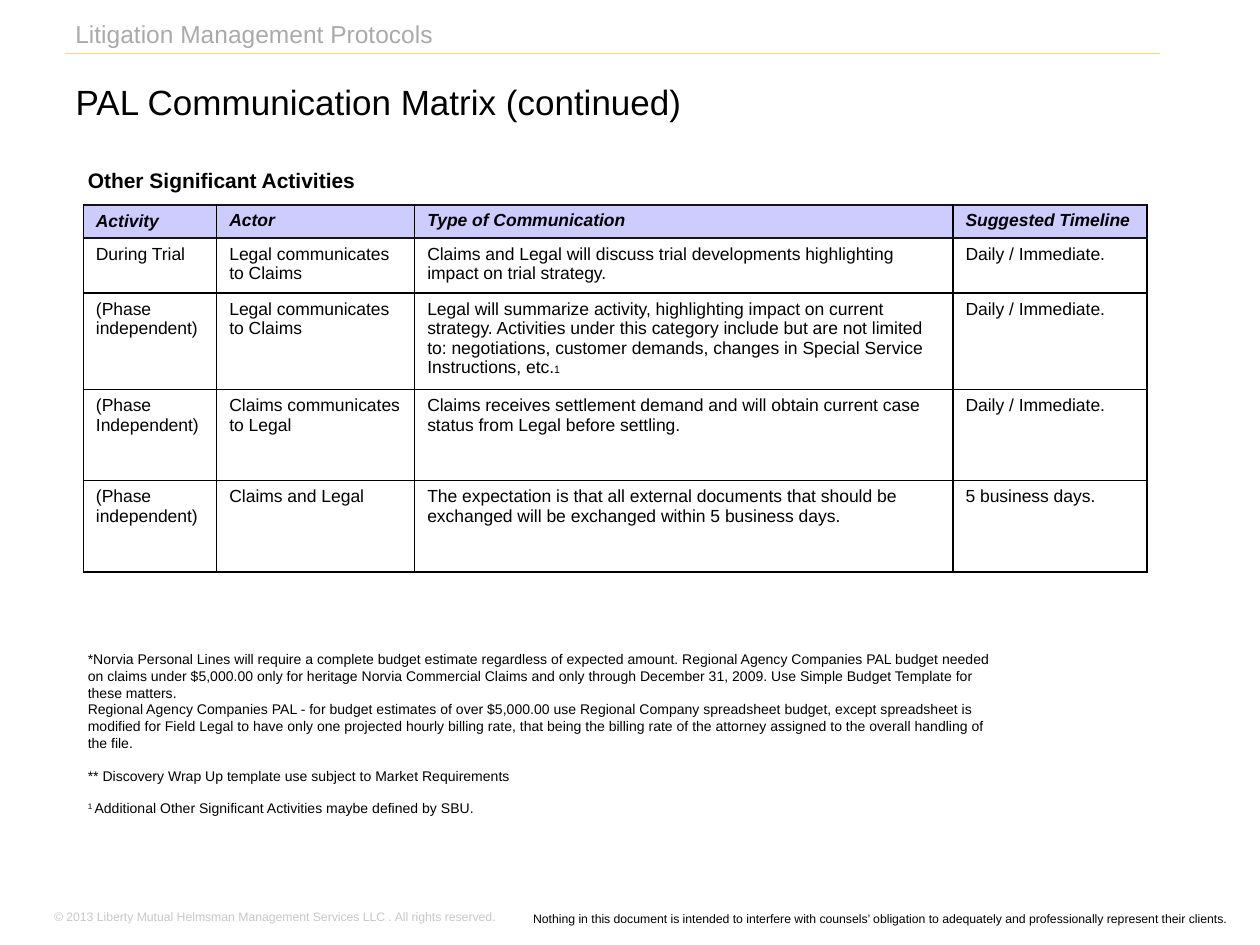
from lxml import etree
from pptx import Presentation
from pptx.dml.color import RGBColor
from pptx.enum.shapes import MSO_CONNECTOR
from pptx.enum.text import MSO_ANCHOR, MSO_AUTO_SIZE, PP_ALIGN
from pptx.oxml.ns import qn
from pptx.util import Cm, Pt

LEFT, RIGHT = PP_ALIGN.LEFT, PP_ALIGN.RIGHT
TOP, MIDDLE, BOTTOM = MSO_ANCHOR.TOP, MSO_ANCHOR.MIDDLE, MSO_ANCHOR.BOTTOM
STRAIGHT = MSO_CONNECTOR.STRAIGHT
NO_AUTOFIT = MSO_AUTO_SIZE.NONE

FONT = "Arial"
TITLE_ONLY = 5
COLORS = {
    "text": "000000",
    "section": "AAAAAA",
    "copyright": "C8C8C8",
    "rule": "F4D87F",
    "header_fill": "CCCCFF",
    "header_border": "131318",
    "border": "000000",
}

COLUMN_WIDTHS = [2.69, 3.99, 10.85, 3.91]
ROW_HEIGHTS = [0.67, 1.11, 1.94, 1.84, 1.84]
FOOTNOTE_MARK = "1"
MATRIX = [
    ["Activity", "Actor", "Type of Communication", "Suggested Timeline"],
    ["During Trial", "Legal communicates to Claims",
     "Claims and Legal will discuss trial developments highlighting impact "
     "on trial strategy.", "Daily / Immediate."],
    ["(Phase independent)", "Legal communicates to Claims",
     "Legal will summarize activity, highlighting impact on current strategy. "
     "Activities under this category include but are not limited to: "
     "negotiations, customer demands, changes in Special Service "
     "Instructions, etc.", "Daily / Immediate."],
    ["(Phase Independent)", "Claims communicates to Legal",
     "Claims receives settlement demand and will obtain current case status "
     "from Legal before settling.", "Daily / Immediate."],
    ["(Phase independent)", "Claims and Legal",
     "The expectation is that all external documents that should be exchanged "
     "will be exchanged within 5 business days.", "5 business days."],
]
NOTES = [
    "*Norvia Personal Lines will require a complete budget estimate regardless "
    "of expected amount. Regional Agency Companies PAL budget needed on claims "
    "under $5,000.00 only for heritage Norvia Commercial Claims and only "
    "through December 31, 2009. Use Simple Budget Template for these matters.",
    "Regional Agency Companies PAL - for budget estimates of over $5,000.00 use "
    "Regional Company spreadsheet budget, except spreadsheet is modified for "
    "Field Legal to have only one projected hourly billing rate, that being the "
    "billing rate of the attorney assigned to the overall handling of the file.",
    "** Discovery Wrap Up template use subject to Market Requirements",
]


def color(name):
    return RGBColor.from_string(COLORS[name])


def format_span(span, size, color_name="text", bold=False, italic=False):
    font = span.font
    font.name, font.size = FONT, Pt(size)
    font.bold, font.italic = bold, italic
    font.color.rgb = color(color_name)


def fill_frame(frame, lines, size, color_name="text", bold=False,
               align=LEFT, anchor=TOP, wrap=True):
    frame.word_wrap = wrap
    frame.auto_size = NO_AUTOFIT
    frame.vertical_anchor = anchor
    frame.text = "\n".join(lines)
    for para in frame.paragraphs:
        para.alignment = align
        for span in para.runs:
            format_span(span, size, color_name, bold)


def add_text(page, left, top, width, height, lines, size, **style):
    box = page.shapes.add_textbox(Cm(left), Cm(top), Cm(width), Cm(height))
    fill_frame(box.text_frame, lines, size, **style)
    return box


def add_rule(page, left, right, top):
    rule = page.shapes.add_connector(STRAIGHT, Cm(left), Cm(top), Cm(right), Cm(top))
    rule.line.color.rgb = color("rule")
    rule.line.width = Pt(0.75)
    etree.SubElement(rule._element.spPr, qn("a:effectLst"))


def set_border(cell, side, color_name, width):
    properties = cell._tc.get_or_add_tcPr()
    line = etree.SubElement(properties, qn(f"a:ln{side}"), w=str(Pt(width)))
    fill = etree.SubElement(line, qn("a:solidFill"))
    etree.SubElement(fill, qn("a:srgbClr"), val=COLORS[color_name])


def format_cell(cell, row, column):
    # Borders come before the fill in the cell properties
    set_border(cell, "L", "border", 0.75 if column == 1 else 1)
    set_border(cell, "R", "border", 0.75 if column == 0 else 1)
    set_border(cell, "T", "header_border" if row <= 1 else "border", 1)
    set_border(cell, "B", "header_border" if row == 0 else "border", 1)
    if row == 0:
        cell.fill.solid()
        cell.fill.fore_color.rgb = color("header_fill")
    else:
        cell.fill.background()
    cell.vertical_anchor = MIDDLE if row == column == 0 else TOP
    for span in cell.text_frame.paragraphs[0].runs:
        format_span(span, 10, bold=row == 0, italic=row == 0)


def add_matrix(page, left, top):
    frame = page.shapes.add_table(
        len(MATRIX), len(MATRIX[0]), Cm(left), Cm(top),
        Cm(sum(COLUMN_WIDTHS)), Cm(sum(ROW_HEIGHTS)))
    table = frame.table
    table.horz_banding = False
    for column, width in zip(table.columns, COLUMN_WIDTHS):
        column.width = Cm(width)
    for row, height in zip(table.rows, ROW_HEIGHTS):
        row.height = Cm(height)
    for row, texts in enumerate(MATRIX):
        for column, text in enumerate(texts):
            cell = table.cell(row, column)
            cell.text = text
            format_cell(cell, row, column)
    # Footnote mark after the summary of phase-independent activity
    mark = table.cell(2, 2).text_frame.paragraphs[0].add_run()
    mark.text = FOOTNOTE_MARK
    format_span(mark, 6)


def add_notes(page):
    box = add_text(page, 1.52, 12.95, 19, 3.68, NOTES, 8, anchor=MIDDLE)
    footnote = box.text_frame.add_paragraph()
    for text in (FOOTNOTE_MARK + " ",
                 "Additional Other Significant Activities maybe defined by SBU."):
        span = footnote.add_run()
        span.text = text
        format_span(span, 8)
    footnote.runs[0]._r.get_or_add_rPr().set("baseline", "30000")
    for para in box.text_frame.paragraphs[2:]:
        para.space_before = Pt(9.2)


def set_title(page, text):
    title = page.shapes.title
    title.left, title.top = Cm(1.27), Cm(1.4)
    title.width, title.height = Cm(22.86), Cm(1.19)
    fill_frame(title.text_frame, [text], 20, anchor=BOTTOM)


def main():
    deck = Presentation()
    deck.slide_width, deck.slide_height = Cm(25.4), Cm(19.05)
    page = deck.slides.add_slide(deck.slide_layouts[TITLE_ONLY])

    # Section heading and page footer
    add_rule(page, 1.32, 23.39, 1.08)
    add_text(page, 1.27, 0.03, 18.21, 1.3, ["Litigation Management Protocols"],
             14, color_name="section", anchor=MIDDLE)
    add_text(page, 7.62, 18.24, 17.36, 0.56,
             ["Nothing in this document is intended to interfere with counsels’ "
              "obligation to adequately and professionally represent their clients."],
             7, align=RIGHT)
    add_text(page, 0.84, 18.21, 17.63, 0.56,
             ["© 2013 Liberty Mutual Helmsman Management Services LLC . "
              "All rights reserved."], 7, color_name="copyright")

    # Title, matrix and notes
    set_title(page, "PAL Communication Matrix (continued)")
    add_text(page, 1.52, 3.25, 5.92, 0.76, ["Other Significant Activities"],
             12, bold=True, anchor=MIDDLE, wrap=False)
    add_matrix(page, 1.68, 4.13)
    add_notes(page)

    deck.save("out.pptx")


if __name__ == "__main__":
    main()
